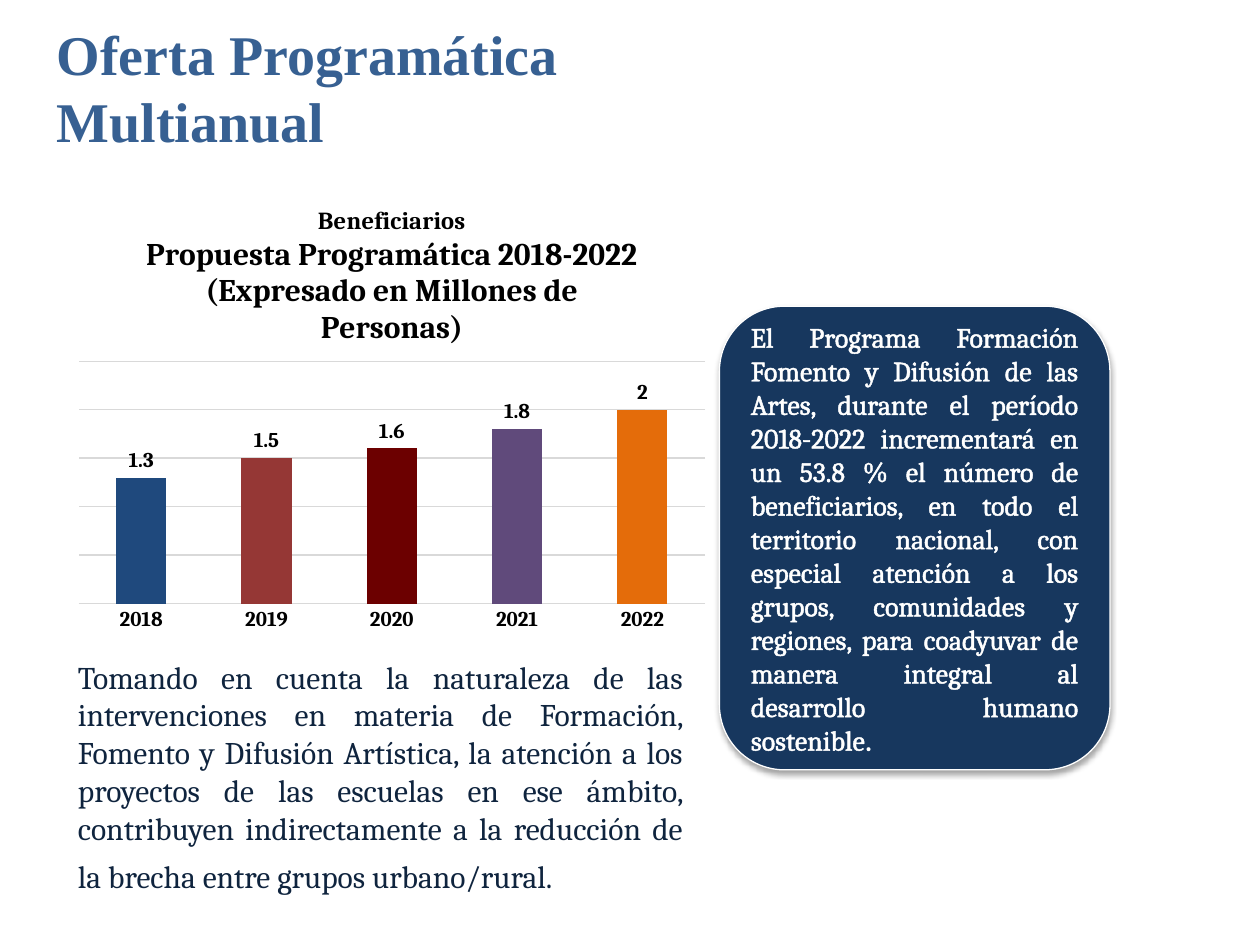
"""Build the slide on the multi-year programme offer and its beneficiaries."""
from lxml import etree
from pptx import Presentation
from pptx import util as u
from pptx.chart.data import CategoryChartData
from pptx.dml.color import RGBColor
from pptx.enum import chart as charts, shapes, text
from pptx.oxml import parse_xml
from pptx.oxml.ns import nsdecls, qn

TITLE = "Oferta Programática Multianual"
CHART_TITLE = [
    ("Beneficiarios", 14),
    ("Propuesta Programática 2018-2022", 18),
    ("(Expresado en Millones de Personas)", 18),
]
BENEFICIARIES = [
    ("2018", 1.3, "1F497D"),
    ("2019", 1.5, "953735"),
    ("2020", 1.6, "6C0000"),
    ("2021", 1.8, "604A7B"),
    ("2022", 2, "E46C0A"),
]
GOAL = (
    "El Programa Formación Fomento y Difusión de las Artes, durante el período "
    "2018-2022 incrementará en un 53.8 % el número de beneficiarios, en todo el "
    "territorio nacional, con especial atención a los grupos, comunidades y regiones, "
    "para coadyuvar de manera integral al desarrollo humano sostenible"
)
CONTEXT = (
    "Tomando en cuenta la naturaleza de las intervenciones en materia de Formación, "
    "Fomento y Difusión Artística, la atención a los proyectos de las escuelas en ese "
    "ámbito, contribuyen indirectamente a la reducción de la brecha entre grupos "
    "urbano/rural."
)
PLOT_AREA = {"x": 0.02, "y": 0.385, "w": 0.96, "h": 0.53}
GRID = "D9D9D9"


def color(value):
    return RGBColor.from_string(value)


def style(font, size, fill="000000", name="Cambria", bold=False):
    font.size = u.Pt(size)
    font.name = name
    font.bold = bold
    font.color.rgb = color(fill)


def add_text(para, words, size, align=None, **look):
    if align is not None:
        para.alignment = align
    span = para.add_run()
    span.text = words
    style(span.font, size, **look)
    return span


def inches(*lengths):
    return [u.Inches(length) for length in lengths]


def add_title(page):
    title = page.shapes.title
    title.left, title.top, title.width, title.height = inches(0.35, 0.25, 5.21, 0.87)
    frame = title.text_frame
    frame.word_wrap = True
    frame.auto_size = text.MSO_AUTO_SIZE.NONE
    frame.vertical_anchor = text.MSO_ANCHOR.MIDDLE
    add_text(frame.paragraphs[0], TITLE, 32, align=text.PP_ALIGN.LEFT,
             fill="376092", name="Times New Roman", bold=True)


def place_plot(chart):
    layout = "".join(f'<c:{key} val="{value}"/>' for key, value in PLOT_AREA.items())
    plot_area = chart._chartSpace.chart.plotArea
    for old in plot_area.findall(qn("c:layout")):
        plot_area.remove(old)
    plot_area.insert(0, parse_xml(
        f'<c:layout {nsdecls("c")}><c:manualLayout><c:layoutTarget val="inner"/>'
        f'<c:xMode val="edge"/><c:yMode val="edge"/>{layout}</c:manualLayout></c:layout>'))


def add_beneficiaries(page):
    years, values, fills = zip(*BENEFICIARIES)
    data = CategoryChartData()
    data.categories = years
    data.add_series("Series 1", values)
    chart = page.shapes.add_chart(charts.XL_CHART_TYPE.COLUMN_CLUSTERED,
                                  *inches(0.52, 1.47, 5.18, 3.63), data).chart
    style(chart.font, 10, name="Calibri")
    chart.has_legend = False

    frame = chart.chart_title.text_frame
    for index, (words, size) in enumerate(CHART_TITLE):
        para = frame.add_paragraph() if index else frame.paragraphs[0]
        add_text(para, words, size, bold=True)
    chart.chart_title.include_in_layout = False
    place_plot(chart)

    axis = chart.category_axis
    axis.major_tick_mark = charts.XL_TICK_MARK.NONE
    style(axis.tick_labels.font, 12, bold=True)
    scale = chart.value_axis
    scale.minimum_scale, scale.maximum_scale, scale.major_unit = 0, 2.5, 0.5
    scale.visible = False
    for line in (axis.format.line, scale.major_gridlines.format.line):
        line.color.rgb = color(GRID)
        line.width = u.Pt(0.75)

    plot = chart.plots[0]
    plot.gap_width = 150
    plot.vary_by_categories = False
    plot.has_data_labels = True
    labels = plot.data_labels
    labels.show_value = True
    labels.position = charts.XL_LABEL_POSITION.OUTSIDE_END
    style(labels.font, 12, bold=True)
    series = plot.series[0]
    series.format.fill.solid()
    series.format.fill.fore_color.rgb = color("C00000")
    for index, fill in enumerate(fills):
        bar = series.points[index].format.fill
        bar.solid()
        bar.fore_color.rgb = color(fill)


def add_shadow(box):
    box.shadow.inherit = False
    effects = box._element.spPr.find(qn("a:effectLst"))
    shadow = etree.SubElement(effects, qn("a:outerShdw"), blurRad=str(u.Pt(3.1)),
                              dist=str(u.Pt(1.8)), dir="5400000", rotWithShape="0")
    tint = etree.SubElement(shadow, qn("a:srgbClr"), val="000000")
    etree.SubElement(tint, qn("a:alpha"), val="35000")


def outline(span, fill):
    span.font._element.insert(0, parse_xml(
        f'<a:ln {nsdecls("a")} w="{u.Pt(0.75)}"><a:solidFill>'
        f'<a:srgbClr val="{fill}"/></a:solidFill></a:ln>'))


def add_goal(page):
    box = page.shapes.add_shape(shapes.MSO_SHAPE.ROUNDED_RECTANGLE,
                                *inches(5.71, 2.43, 3.1, 3.68))
    box.fill.solid()
    box.fill.fore_color.rgb = color("17375E")
    box.line.color.rgb = color("FFFFFF")
    box.line.width = u.Pt(0.75)
    add_shadow(box)
    frame = box.text_frame
    frame.word_wrap = True
    frame.vertical_anchor = text.MSO_ANCHOR.MIDDLE
    para = frame.paragraphs[0]
    for words, name in ((GOAL, "Cambria"), (".", "Calibri")):
        outline(add_text(para, words, 16, align=text.PP_ALIGN.JUSTIFY,
                         fill="FFFFFF", name=name), "FFFFFF")


def add_context(page):
    frame = page.shapes.add_textbox(*inches(0.52, 5.17, 5, 2.02)).text_frame
    frame.word_wrap = True
    frame.auto_size = text.MSO_AUTO_SIZE.SHAPE_TO_FIT_TEXT
    para = frame.paragraphs[0]
    for words, size in ((CONTEXT, 18), (" ", 24)):
        add_text(para, words, size, align=text.PP_ALIGN.JUSTIFY, fill="0F243E")


def main():
    deck = Presentation()
    deck.slide_width, deck.slide_height = inches(10, 7.5)
    page = deck.slides.add_slide(deck.slide_layouts[5])
    add_title(page)
    add_beneficiaries(page)
    add_goal(page)
    add_context(page)
    deck.save("out.pptx")


if __name__ == "__main__":
    main()
